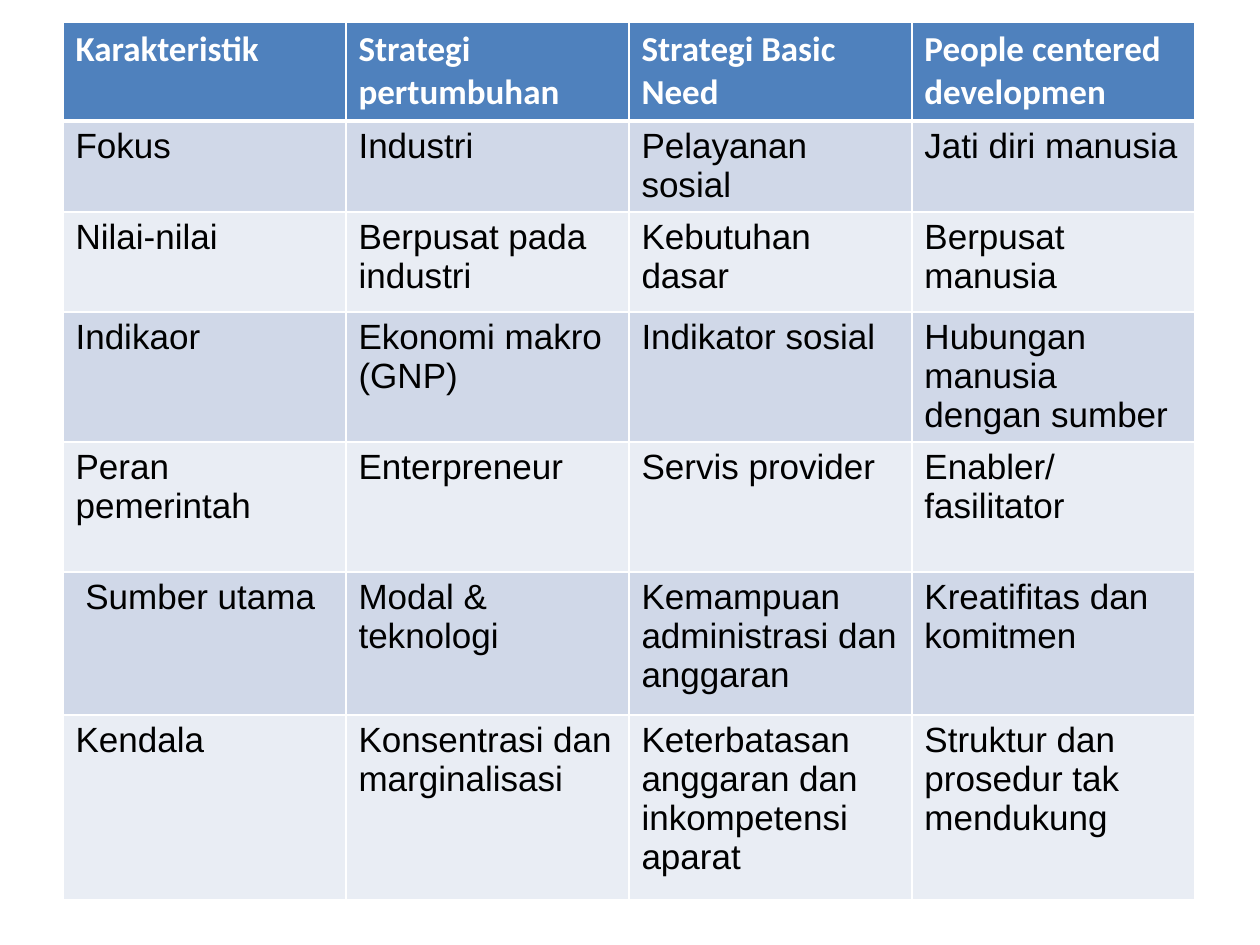
from dataclasses import dataclass

from lxml.etree import fromstring
from pptx import Presentation
from pptx.dml.color import RGBColor
from pptx.util import Pt

PX = 914400 // 126

HEADER = ("Karakteristik", "Strategi pertumbuhan", "Strategi Basic Need",
          "People centered developmen")
# Row height in px, then the cells
COMPARISON = [
    (91, ("Fokus", "Industri", "Pelayanan sosial", "Jati diri manusia")),
    (100, ("Nilai-nilai", "Berpusat pada industri", "Kebutuhan dasar",
           "Berpusat manusia")),
    (130, ("Indikaor", "Ekonomi makro (GNP)", "Indikator sosial",
           "Hubungan manusia dengan sumber")),
    (130, ("Peran pemerintah", "Enterpreneur", "Servis provider",
           "Enabler/fasilitator")),
    (143, (" Sumber utama", "Modal & teknologi",
           "Kemampuan administrasi dan anggaran", "Kreatifitas dan komitmen")),
    (185, ("Kendala", "Konsentrasi dan marginalisasi",
           "Keterbatasan anggaran dan inkompetensi aparat",
           "Struktur dan prosedur tak mendukung")),
]
ROWS = [(99, HEADER), *COMPARISON]
LEFT, TOP, COLUMN_WIDTH = 63, 22, 1134 // len(HEADER)


@dataclass(frozen=True)
class Theme:
    header_fill: str = "4F81BD"
    bands: tuple = ("D0D8E8", "E9EDF4")
    border: str = "FFFFFF"
    thin: int = 1
    thick: int = 3
    header_font: tuple = (("name", "Calibri"), ("bold", True))
    body_font: tuple = (("name", "Arial"), ("bold", False))
    header_text: str = "FFFFFF"
    body_text: str = "000000"
    size: int = 20


THEME = Theme()


def set_borders(cell, widths):
    """Put border lines, given as {side: points}, ahead of the cell fill."""
    properties = cell._tc.get_or_add_tcPr()
    for position, (side, points) in enumerate(widths.items()):
        properties.insert(position, fromstring(
            '<a:ln{0} xmlns:a="http://schemas.openxmlformats.org/drawingml/2006/main"'
            ' w="{1}"><a:solidFill><a:srgbClr val="{2}"/></a:solidFill></a:ln{0}>'
            .format(side, Pt(points), THEME.border)))


def fill_cell(cell, wording, row):
    is_header = row == 0
    cell.text = wording
    font = cell.text_frame.paragraphs[0].runs[0].font
    font.size = Pt(THEME.size)
    for attribute, value in THEME.header_font if is_header else THEME.body_font:
        setattr(font, attribute, value)
    font.color.rgb = RGBColor.from_string(
        THEME.header_text if is_header else THEME.body_text)
    cell.fill.solid()
    cell.fill.fore_color.rgb = RGBColor.from_string(
        THEME.header_fill if is_header else THEME.bands[(row - 1) % 2])
    set_borders(cell, {
        "L": THEME.thin,
        "R": THEME.thin,
        "T": THEME.thick if row == 1 else THEME.thin,
        "B": THEME.thick if is_header else THEME.thin,
    })


def main():
    deck = Presentation()
    deck.slide_width, deck.slide_height = 1260 * PX, 945 * PX
    slide = deck.slides.add_slide(deck.slide_layouts[6])
    strategies = slide.shapes.add_table(
        len(ROWS), len(HEADER), LEFT * PX, TOP * PX,
        COLUMN_WIDTH * len(HEADER) * PX,
        sum(height for height, _ in ROWS) * PX).table
    for column in strategies.columns:
        column.width = COLUMN_WIDTH * PX
    for row, (height, wordings) in enumerate(ROWS):
        strategies.rows[row].height = height * PX
        for column, wording in enumerate(wordings):
            fill_cell(strategies.cell(row, column), wording, row)
    deck.save("out.pptx")


if __name__ == "__main__":
    main()
